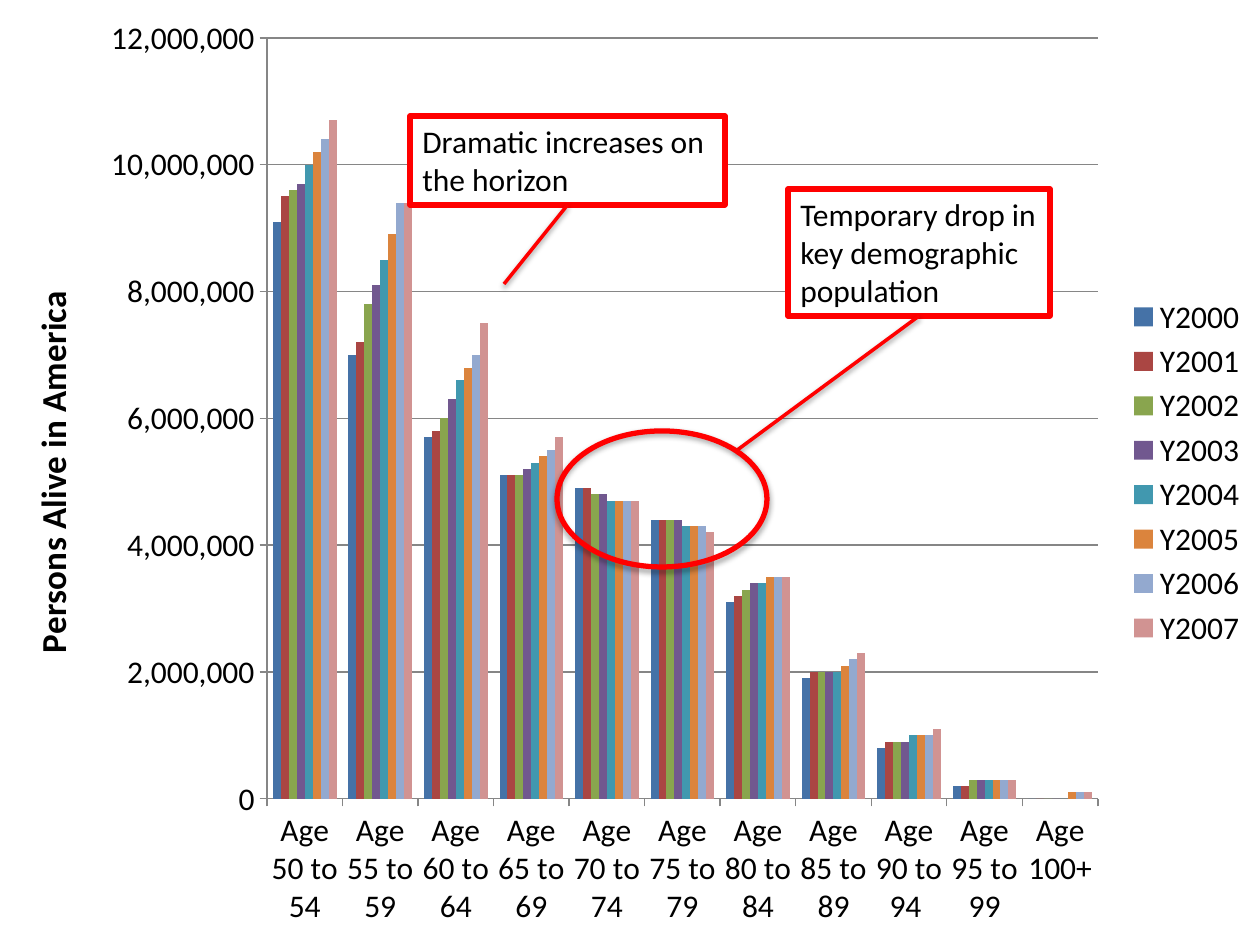
from lxml.etree import SubElement
from pptx import Presentation
from pptx.chart.data import CategoryChartData
from pptx.dml.color import RGBColor
from pptx.enum.chart import XL_CHART_TYPE as ChartType, XL_LEGEND_POSITION as LegendPos
from pptx.enum.chart import XL_TICK_MARK as Tick
from pptx.enum.shapes import MSO_CONNECTOR as Connector, MSO_SHAPE as Shape
from pptx.enum.text import MSO_AUTO_SIZE as AutoSize
from pptx.oxml import parse_xml
from pptx.oxml.ns import nsdecls, qn
from pptx.util import Emu, Pt

# Content
FONT = "Calibri"
COLORS = {"text": "000000", "paper": "FFFFFF", "callout": "FF0000", "grid": "868686"}
AXIS_TITLE = "Persons Alive in America"
AGES = ["Age 50 to 54", "Age 55 to 59", "Age 60 to 64", "Age 65 to 69",
        "Age 70 to 74", "Age 75 to 79", "Age 80 to 84", "Age 85 to 89",
        "Age 90 to 94 ", "Age 95 to 99", "Age 100+"]
# Year, bar colour, persons in units of 100,000 for each age group
UNIT = 100_000
YEARS = [
    ("Y2000", "4572A7", [91, 70, 57, 51, 49, 44, 31, 19, 8, 2, 0]),
    ("Y2001", "AA4643", [95, 72, 58, 51, 49, 44, 32, 20, 9, 2, 0]),
    ("Y2002", "89A54E", [96, 78, 60, 51, 48, 44, 33, 20, 9, 3, 0]),
    ("Y2003", "71588F", [97, 81, 63, 52, 48, 44, 34, 20, 9, 3, 0]),
    ("Y2004", "4198AF", [100, 85, 66, 53, 47, 43, 34, 20, 10, 3, 0]),
    ("Y2005", "DB843D", [102, 89, 68, 54, 47, 43, 35, 21, 10, 3, 1]),
    ("Y2006", "93A9CF", [104, 94, 70, 55, 47, 43, 35, 22, 10, 3, 1]),
    ("Y2007", "D19392", [107, 94, 75, 57, 47, 42, 35, 23, 11, 3, 1]),
]
# Callout text, box (left, top, width, height), point its line leads to
CALLOUTS = [
    ("Dramatic increases on the horizon", (410, 116, 315, 89), (504, 284)),
    ("Temporary drop in key demographic population", (788, 189, 262, 127), (736, 451)),
]
DROP_RING = (557, 431, 210, 136)
SLIDE_W, SLIDE_H = 1260, 945
PLOT = (267, 38, 831, 761)


def px(n):
    return Emu(round(n * 914400 / 126))


def rgb(key):
    return RGBColor.from_string(COLORS.get(key, key))


def set_font(font, size, color="text", bold=False):
    font.name, font.size, font.bold = FONT, Pt(size), bold
    font.color.rgb = rgb(color)


def write(frame, text, size=18, **style):
    frame.word_wrap = True
    run = frame.paragraphs[0].add_run()
    run.text = text
    set_font(run.font, size, **style)


def outline(line, color="callout", width=3):
    line.color.rgb = rgb(color)
    line.width = Pt(width)


def add_shadow(shape, alpha, distance):
    shape._element.spPr.append(parse_xml(
        f'<a:effectLst {nsdecls("a")}><a:outerShdw blurRad="40000" dist="{distance}" '
        f'dir="5400000" rotWithShape="0"><a:srgbClr val="{COLORS["text"]}">'
        f'<a:alpha val="{alpha * 1000}"/></a:srgbClr></a:outerShdw></a:effectLst>'))


def fix_plot_area(chart):
    plot_area = chart._chartSpace.chart.plotArea
    layout = plot_area.find(qn("c:layout"))
    if layout is None:
        layout = SubElement(plot_area, qn("c:layout"))
        plot_area.insert(0, layout)
    manual = SubElement(layout, qn("c:manualLayout"))
    x, y, w, h = PLOT
    settings = [("layoutTarget", "inner"), ("xMode", "edge"), ("yMode", "edge"),
                ("x", x / SLIDE_W), ("y", y / SLIDE_H),
                ("w", w / SLIDE_W), ("h", h / SLIDE_H)]
    for tag, value in settings:
        SubElement(manual, qn(f"c:{tag}")).set("val", str(value))


def add_population_chart(slide):
    data = CategoryChartData(number_format="#,##0")
    data.categories = AGES
    for year, _, persons in YEARS:
        data.add_series(year, [n * UNIT for n in persons])
    chart = slide.shapes.add_chart(ChartType.COLUMN_CLUSTERED, 0, 0,
                                   px(SLIDE_W), px(SLIDE_H), data).chart
    set_font(chart.font, 10)
    chart.has_title = False
    fix_plot_area(chart)

    # Bars
    bars = chart.plots[0]
    bars.gap_width, bars.overlap, bars.vary_by_categories = 150, 0, False
    for series, (_, color, _) in zip(bars.series, YEARS):
        series.format.fill.solid()
        series.format.fill.fore_color.rgb = rgb(color)
        series.invert_if_negative = False

    # Axes
    ages, persons = chart.category_axis, chart.value_axis
    for axis in (ages, persons):
        set_font(axis.tick_labels.font, 18)
        axis.major_tick_mark = Tick.OUTSIDE
        axis.minor_tick_mark = Tick.NONE
        outline(axis.format.line, "grid", 0.75)
    persons.minimum_scale, persons.maximum_scale = 0, 12_000_000
    persons.major_unit = 2_000_000
    persons.tick_labels.number_format = "#,##0"
    persons.tick_labels.number_format_is_linked = False
    persons.has_major_gridlines = True
    outline(persons.major_gridlines.format.line, "grid", 0.75)
    write(persons.axis_title.text_frame, AXIS_TITLE, size=20, bold=True)

    # Legend
    chart.has_legend = True
    chart.legend.position = LegendPos.RIGHT
    chart.legend.include_in_layout = False
    set_font(chart.legend.font, 18)


def add_callout(slide, text, box, target):
    note = slide.shapes.add_textbox(*map(px, box))
    note.fill.solid()
    note.fill.fore_color.rgb = rgb("paper")
    outline(note.line)
    write(note.text_frame, text)
    note.text_frame.auto_size = AutoSize.SHAPE_TO_FIT_TEXT
    left, top, width, height = box
    ends = (left + width / 2, top + height, *target)
    leader = slide.shapes.add_connector(Connector.STRAIGHT, *map(px, ends))
    leader.begin_connect(note, 2)
    outline(leader.line, width=2)
    add_shadow(leader, alpha=38, distance=20000)


def main():
    prs = Presentation()
    prs.slide_width, prs.slide_height = px(SLIDE_W), px(SLIDE_H)
    slide = prs.slides.add_slide(prs.slide_layouts[6])
    add_population_chart(slide)
    for callout in CALLOUTS:
        add_callout(slide, *callout)

    # Ring around the falling age groups
    ring = slide.shapes.add_shape(Shape.OVAL, *map(px, DROP_RING))
    ring.fill.background()
    outline(ring.line)
    add_shadow(ring, alpha=35, distance=23000)
    prs.save("out.pptx")


if __name__ == "__main__":
    main()
